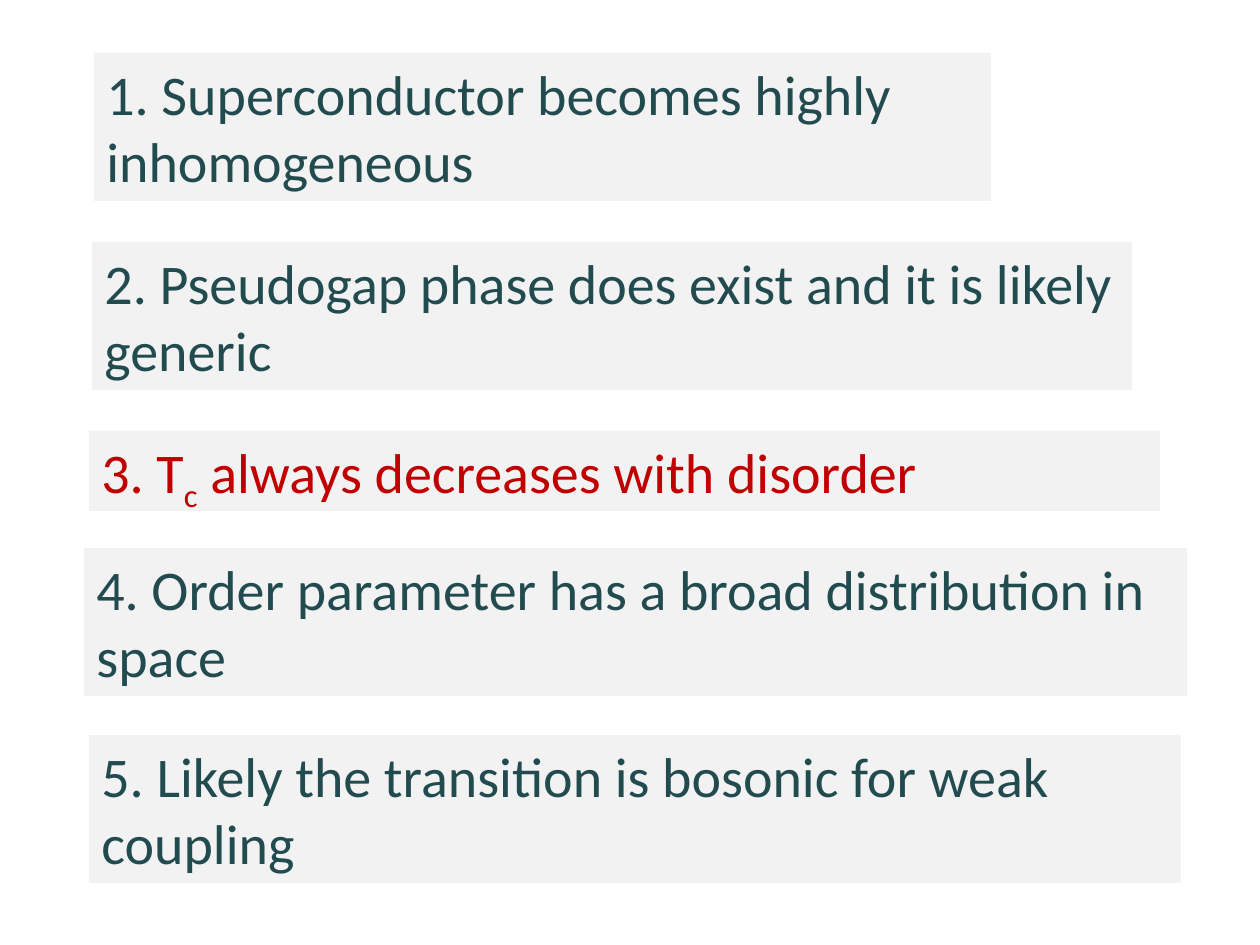
import dataclasses

import pptx
import pptx.dml.color
import pptx.enum.text
import pptx.util

DPI = 126
TEAL, RED, GREY = "224B50", "C00000", "F2F2F2"


@dataclasses.dataclass
class Point:
    left: int
    top: int
    width: int
    height: int
    words: tuple[str, ...]  # every second item is a subscript
    color: str = TEAL


POINTS = [
    Point(94, 53, 897, 148, ("1. Superconductor becomes highly inhomogeneous",)),
    Point(92, 242, 1040, 148, ("2. Pseudogap phase does exist and it is likely generic",)),
    Point(89, 431, 1071, 80, ("3. T", "c", " always decreases with disorder"), RED),
    Point(84, 548, 1103, 148, ("4. Order parameter has a broad distribution in space",)),
    Point(89, 735, 1092, 148, ("5. Likely the transition is bosonic for weak coupling",)),
]


def px(count: int) -> pptx.util.Emu:
    return pptx.util.Emu(round(count * 914400 / DPI))


def rgb(code: str) -> pptx.dml.color.RGBColor:
    return pptx.dml.color.RGBColor.from_string(code)


def apply(target: object, values: dict) -> None:
    for name, value in values.items():
        setattr(target, name, value)


def draw(slide, point: Point) -> None:
    box = slide.shapes.add_textbox(
        px(point.left), px(point.top), px(point.width), px(point.height))
    box.fill.solid()
    box.fill.fore_color.rgb = rgb(GREY)
    frame = box.text_frame
    apply(frame, {
        "word_wrap": True,
        "auto_size": pptx.enum.text.MSO_AUTO_SIZE.SHAPE_TO_FIT_TEXT,
    })
    for index, text in enumerate(point.words):
        run = frame.paragraphs[0].add_run()
        run.text = text
        apply(run.font, {"name": "Calibri", "size": pptx.util.Pt(32)})
        run.font.color.rgb = rgb(point.color)
        if index % 2:
            run._r.get_or_add_rPr().set("baseline", "-25000")


def main() -> None:
    deck = pptx.Presentation()
    apply(deck, {"slide_width": px(1260), "slide_height": px(945)})
    slide = deck.slides.add_slide(deck.slide_layouts[6])
    for point in POINTS:
        draw(slide, point)
    deck.save("out.pptx")


if __name__ == "__main__":
    main()
